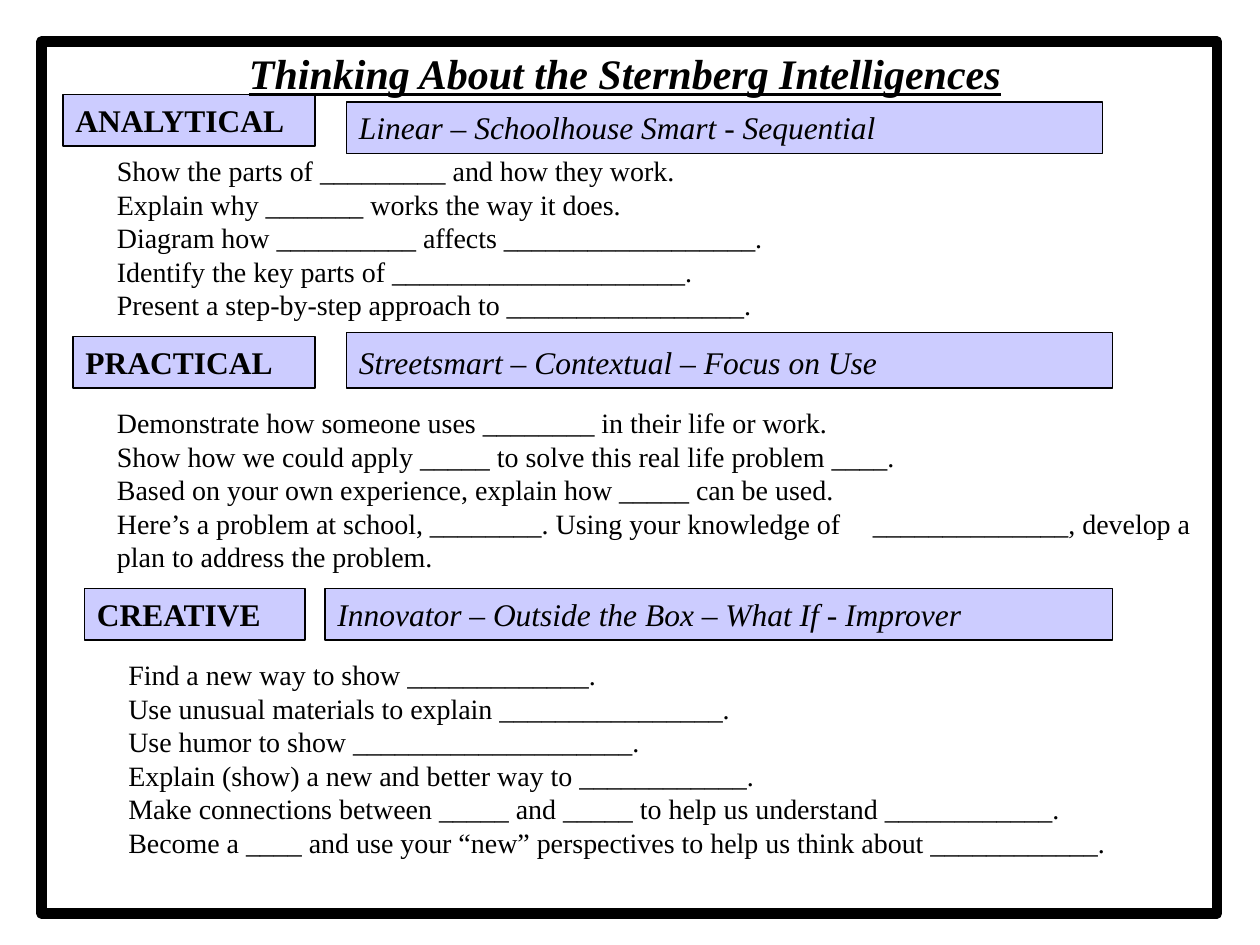
from pptx import Presentation
from pptx.dml.color import RGBColor
from pptx.enum.shapes import MSO_SHAPE
from pptx.enum.text import MSO_ANCHOR, MSO_AUTO_SIZE, PP_ALIGN
from pptx.util import Inches, Pt

RECTANGLE = MSO_SHAPE.RECTANGLE
TOP = MSO_ANCHOR.TOP
GROW = MSO_AUTO_SIZE.SHAPE_TO_FIT_TEXT
LEFT, CENTER = PP_ALIGN.LEFT, PP_ALIGN.CENTER
BLACK = RGBColor(0x00, 0x00, 0x00)
WHITE = RGBColor(0xFF, 0xFF, 0xFF)
LAVENDER = RGBColor(0xCC, 0xCC, 0xFF)
FONT = "Times New Roman"

SECTIONS = [
    {
        "name": ("ANALYTICAL", (0.5, 0.75, 2, 0.41)),
        "style": ("Linear – Schoolhouse Smart - Sequential", (2.75, 0.81, 6, 0.41)),
        "style_spacing": 1.0,
        "prompts_box": (0.83, 1.17, 8.13, 1.44),
        "prompts": [
            "Show the parts of _________ and how they work.",
            "Explain why _______ works the way it does.",
            "Diagram how __________ affects __________________.",
            "Identify the key parts of _____________________.",
            "Present a step-by-step approach to _________________.",
        ],
    },
    {
        "name": ("PRACTICAL", (0.58, 2.67, 1.92, 0.41)),
        "style": ("Streetsmart – Contextual – Focus on Use", (2.75, 2.64, 6.08, 0.44)),
        "style_spacing": 1.1,
        "prompts_box": (0.83, 3.17, 8.78, 1.44),
        "prompts": [
            "Demonstrate how someone uses ________ in their life or work.",
            "Show how we could apply _____ to solve this real life problem ____.",
            "Based on your own experience, explain how _____ can be used.",
            "Here’s a problem at school, ________. Using your knowledge of "
            "\t______________, develop a plan to address the problem.",
        ],
    },
    {
        "name": ("CREATIVE", (0.67, 4.67, 1.75, 0.41)),
        "style": ("Innovator – Outside the Box – What If - Improver", (2.58, 4.67, 6.25, 0.41)),
        "style_spacing": 1.0,
        "prompts_box": (0.92, 5.17, 8.5, 1.97),
        "prompts": [
            "Find a new way to show _____________.",
            "Use unusual materials to explain ________________.",
            "Use humor to show ____________________.",
            "Explain (show) a new and better way to ____________.",
            "Make connections between _____ and _____ to help us understand ____________.",
            "Become a ____ and use your “new” perspectives to help us think about ____________.",
        ],
    },
]


def write(shape, lines, size, bold=False, italic=False, underline=False,
          align=LEFT, spacing=1.0):
    frame = shape.text_frame
    frame.word_wrap = True
    frame.auto_size = GROW
    frame.vertical_anchor = TOP
    frame.text = "\n".join(lines)
    for paragraph in frame.paragraphs:
        paragraph.alignment = align
        paragraph.line_spacing = spacing
        font = paragraph.font
        font.name, font.size = FONT, Pt(size)
        font.bold, font.italic, font.underline = bold, italic, underline
        font.color.rgb = BLACK


def add_box(slide, place, fill, line_width):
    box = slide.shapes.add_shape(RECTANGLE, *map(Inches, place))
    box.shadow.inherit = False
    box.fill.solid()
    box.fill.fore_color.rgb = fill
    box.line.color.rgb = BLACK
    box.line.width = Pt(line_width)
    return box


def add_label(slide, label, **style):
    text, place = label
    write(add_box(slide, place, LAVENDER, 0.75), [text], 18, **style)


def add_text(slide, place, lines, size, **style):
    write(slide.shapes.add_textbox(*map(Inches, place)), lines, size, **style)


def add_section(slide, section):
    add_label(slide, section["style"], italic=True, spacing=section["style_spacing"])
    add_label(slide, section["name"], bold=True)
    add_text(slide, section["prompts_box"], section["prompts"], 16)


def main():
    presentation = Presentation()
    presentation.slide_width, presentation.slide_height = Inches(10), Inches(7.5)
    slide = presentation.slides.add_slide(presentation.slide_layouts[6])
    add_box(slide, (0.33, 0.33, 9.33, 6.92), WHITE, 6)
    for section in SECTIONS:
        add_section(slide, section)
    add_text(slide, (1, 0.33, 7.92, 0.5), ["Thinking About the Sternberg Intelligences"],
             24, bold=True, italic=True, underline=True, align=CENTER)
    presentation.save("out.pptx")


if __name__ == "__main__":
    main()
